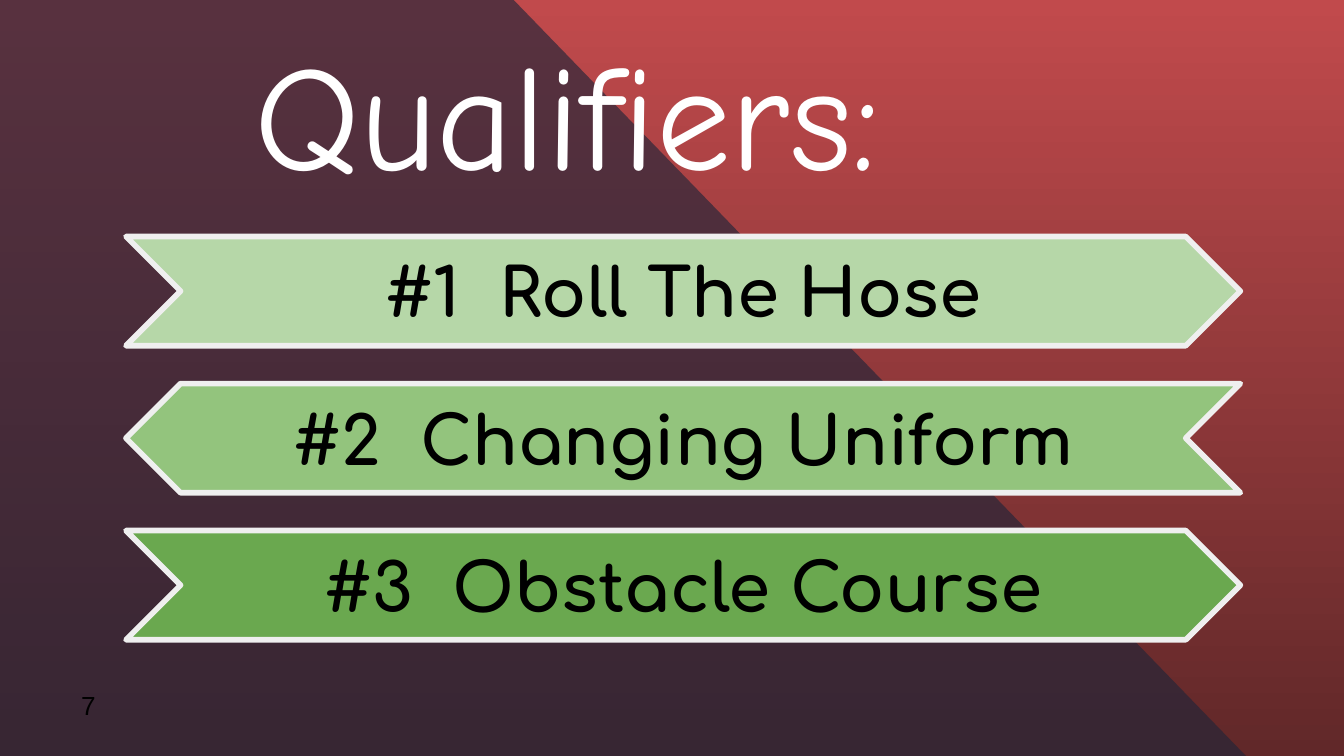
from dataclasses import dataclass

from lxml.etree import SubElement
from pptx import Presentation
from pptx.dml.color import RGBColor
from pptx.enum.shapes import MSO_SHAPE
from pptx.enum.text import MSO_ANCHOR, PP_ALIGN
from pptx.oxml.ns import qn
from pptx.slide import Slide
from pptx.text.text import TextFrame
from pptx.util import Pt

EMU_PER_PX = 9525


@dataclass(frozen=True)
class Box:
    left: int
    top: int
    width: int
    height: int

    def emu(self) -> tuple[int, ...]:
        return tuple(px(v) for v in (self.left, self.top, self.width, self.height))


@dataclass(frozen=True)
class TextStyle:
    font: str
    size: int
    color: str
    bold: bool = False
    align: PP_ALIGN = PP_ALIGN.LEFT
    anchor: MSO_ANCHOR = MSO_ANCHOR.MIDDLE


@dataclass(frozen=True)
class Banner:
    text: str
    fill: str
    flipped: bool = False


TITLE = TextStyle("Comic Neue", 80, "FFFFFF", anchor=MSO_ANCHOR.TOP)
NUMBER = TextStyle("Arial", 14, "000000")
LABEL = TextStyle("Comfortaa", 36, "000000", bold=True, align=PP_ALIGN.CENTER)

BANNERS = [
    Banner("#1  Roll The Hose", "B6D7A8"),
    Banner("#2  Changing Uniform", "93C47D", flipped=True),
    Banner("#3  Obstacle Course", "6AA84F"),
]
FIRST_BANNER_TOP = 169
BANNER_PITCH = 105


def px(value: int) -> int:
    return value * EMU_PER_PX


def color(value: str) -> RGBColor:
    return RGBColor.from_string(value)


def write(frame: TextFrame, text: str, style: TextStyle) -> None:
    frame.word_wrap = True
    frame.vertical_anchor = style.anchor
    frame.margin_left = frame.margin_right = px(10)
    frame.margin_top = frame.margin_bottom = px(10)
    paragraph = frame.paragraphs[0]
    paragraph.text = text
    paragraph.alignment = style.align
    paragraph.font.name = style.font
    paragraph.font.size = Pt(style.size)
    paragraph.font.bold = style.bold
    paragraph.font.color.rgb = color(style.color)


def add_text(slide: Slide, box: Box, text: str, style: TextStyle) -> None:
    write(slide.shapes.add_textbox(*box.emu()).text_frame, text, style)


def add_background(slide: Slide) -> None:
    fill = slide.background.fill
    fill.gradient()
    fill.gradient_angle = 270
    for stop, value in zip(fill.gradient_stops, ("C14A4C", "612829")):
        stop.color.rgb = color(value)


def add_dark_panel(slide: Slide) -> None:
    builder = slide.shapes.build_freeform(366, -1, scale=EMU_PER_PX)
    builder.add_line_segments([(0, 0), (0, 540), (890, 540)], close=True)
    shape = builder.convert_to_shape()
    shape.shadow.inherit = False
    shape.line.fill.background()
    shape.fill.solid()
    shape.fill.fore_color.rgb = color("212539")
    fill_color = shape._element.spPr.find(f"{qn('a:solidFill')}/{qn('a:srgbClr')}")
    SubElement(fill_color, qn("a:alpha"), val="65000")


def add_banner(slide: Slide, box: Box, banner: Banner) -> None:
    shape = slide.shapes.add_shape(MSO_SHAPE.CHEVRON, *box.emu())
    shape.shadow.inherit = False
    shape.adjustments[0] = 0.5
    shape.fill.solid()
    shape.fill.fore_color.rgb = color(banner.fill)
    shape.line.color.rgb = color("EFEFEF")
    shape.line.width = Pt(3)
    SubElement(shape._element.spPr.find(qn("a:ln")), qn("a:round"))
    if banner.flipped:
        shape._element.spPr.xfrm.set("flipH", "1")
    write(shape.text_frame, banner.text, LABEL)


def main() -> None:
    presentation = Presentation()
    presentation.slide_width = px(960)
    presentation.slide_height = px(540)
    slide = presentation.slides.add_slide(presentation.slide_layouts[6])

    add_background(slide)
    add_dark_panel(slide)
    add_text(slide, Box(48, 491, 58, 26), "7", NUMBER)
    add_text(slide, Box(172, 5, 796, 158), "Qualifiers:", TITLE)
    for index, banner in enumerate(BANNERS):
        top = FIRST_BANNER_TOP + index * BANNER_PITCH
        add_banner(slide, Box(90, top, 796, 78), banner)

    presentation.save("out.pptx")


if __name__ == "__main__":
    main()
